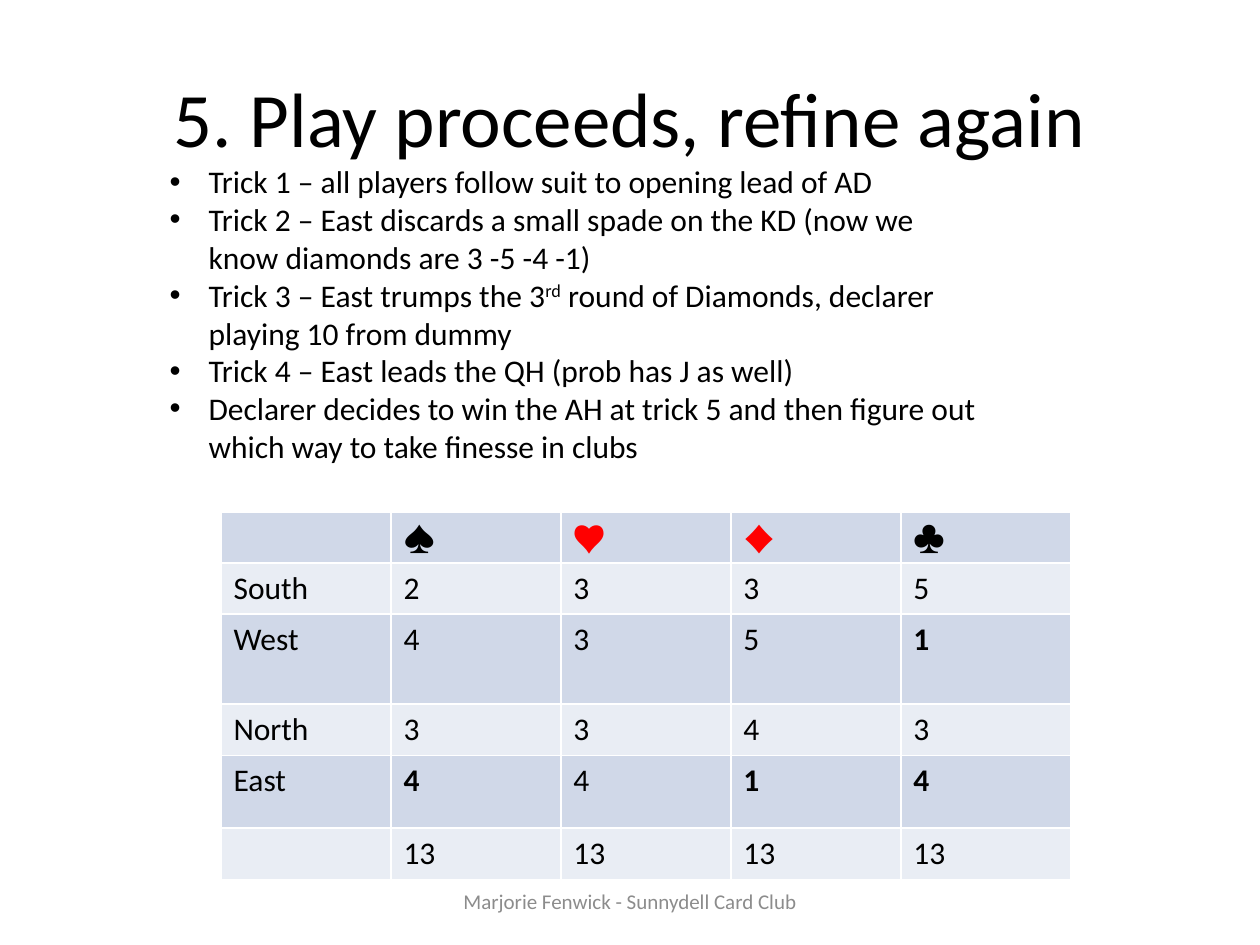
from lxml import etree
from pptx import Presentation
from pptx.dml.color import RGBColor
from pptx.enum.text import MSO_ANCHOR, MSO_AUTO_SIZE, PP_ALIGN
from pptx.oxml.ns import qn
from pptx.util import Pt

PX = 914400 // 126
MID, TOP = MSO_ANCHOR.MIDDLE, MSO_ANCHOR.TOP
CENTER, LEFT = PP_ALIGN.CENTER, PP_ALIGN.LEFT
FIXED = MSO_AUTO_SIZE.NONE
FONT = "Calibri"
COLORS = {
    "ink": "000000", "red": "FF0000", "grey": "8C8C8C",
    "dark": "D0D8E8", "light": "E9EDF4", "rule": "FFFFFF",
}

TRICKS = [
    "Trick 1 – all players follow suit to opening lead of AD",
    "Trick 2 – East discards a small spade on the KD (now we know diamonds are 3 -5 -4 -1)",
    "Trick 3 – East trumps the 3^rd^ round of Diamonds, declarer playing 10 from dummy",
    "Trick 4 – East leads the QH (prob has J as well)",
    "Declarer decides to win the AH at trick 5 and then figure out which way to take finesse in clubs",
]
HANDS = [
    ["", "♠", "♥", "♦", "♣"],
    ["South", "2", "3", "3", "5"],
    ["West", "4", "3", "5", "1"],
    ["North", "3", "3", "4", "3"],
    ["East", "4", "4", "1", "4"],
    ["", "13", "13", "13", "13"],
]
HEIGHTS = [51, 51, 90, 51, 73, 51]
BOLD = {(2, 4), (4, 1), (4, 3), (4, 4)}
RED_SUITS = {"♥", "♦"}


def color(name):
    return RGBColor.from_string(COLORS[name])


def style(para, size, name="ink", bold=False, align=LEFT):
    para.alignment = align
    for run in para.runs:
        font = run.font
        font.name, font.size, font.bold = FONT, Pt(size), bold
        font.color.rgb = color(name)


def place(shape, box, anchor):
    shape.left, shape.top, shape.width, shape.height = [n * PX for n in box]
    frame = shape.text_frame
    frame.word_wrap = True
    frame.auto_size = FIXED
    frame.vertical_anchor = anchor
    return frame


def add_title(slide, box):
    frame = place(slide.shapes.title, box, MID)
    frame.text = "5. Play proceeds, refine again"
    style(frame.paragraphs[0], 44, align=CENTER)


def add_list(slide, box):
    frame = place(slide.placeholders[1], box, TOP)
    for i, trick in enumerate(TRICKS):
        para = frame.add_paragraph() if i else frame.paragraphs[0]
        for j, part in enumerate(trick.split("^")):
            run = para.add_run()
            run.text = part
            if j % 2:
                run.font._element.set("baseline", "30000")
        para.space_before = Pt(0)
        props = para._p.get_or_add_pPr()
        props.set("marL", str(39 * PX))
        props.set("indent", str(-39 * PX))
        style(para, 18)


def add_rules(cell):
    props = cell._tc.get_or_add_tcPr()
    for i, side in enumerate(("lnL", "lnR", "lnT", "lnB")):
        line = etree.Element(qn("a:" + side), w=str(Pt(1)))
        fill = etree.SubElement(line, qn("a:solidFill"))
        etree.SubElement(fill, qn("a:srgbClr"), val=COLORS["rule"])
        props.insert(i, line)


def add_hands(slide, box):
    frame = slide.shapes.add_table(len(HANDS), len(HANDS[0]), *[n * PX for n in box])
    table = frame.table
    for col in table.columns:
        col.width = box[2] * PX // len(HANDS[0])
    for r, hand in enumerate(HANDS):
        table.rows[r].height = HEIGHTS[r] * PX
        for c, text in enumerate(hand):
            cell = table.cell(r, c)
            cell.text = text
            name = "red" if text in RED_SUITS else "ink"
            style(cell.text_frame.paragraphs[0], 18, name, (r, c) in BOLD)
            cell.fill.solid()
            cell.fill.fore_color.rgb = color("light" if r % 2 else "dark")
            add_rules(cell)


def add_footer(slide, box):
    frame = place(slide.shapes.add_textbox(0, 0, 0, 0), box, MID)
    frame.text = "Marjorie Fenwick - Sunnydell Card Club"
    style(frame.paragraphs[0], 12, "grey", align=CENTER)


def main():
    deck = Presentation()
    deck.slide_width, deck.slide_height = 1260 * PX, 945 * PX
    slide = deck.slides.add_slide(deck.slide_layouts[1])
    add_title(slide, (63, 38, 1134, 157))
    add_footer(slide, (430, 876, 400, 50))
    add_hands(slide, (221, 512, 850, sum(HEIGHTS)))
    add_list(slide, (157, 156, 840, 356))
    deck.save("out.pptx")


if __name__ == "__main__":
    main()
